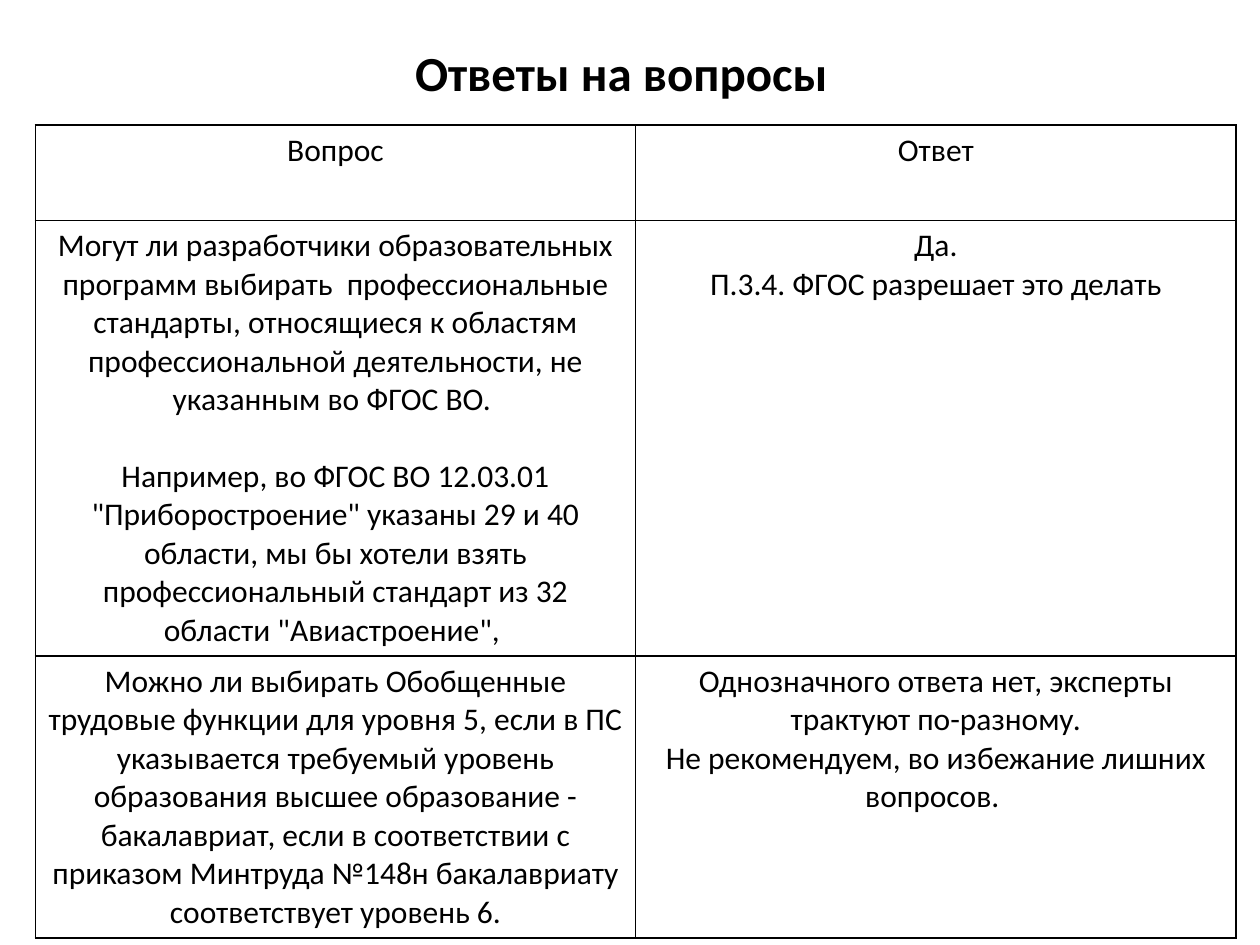
from dataclasses import dataclass

from lxml.etree import SubElement
from pptx import Presentation
from pptx.dml.color import RGBColor
from pptx.enum.text import MSO_ANCHOR, PP_ALIGN
from pptx.oxml.ns import qn
from pptx.util import Inches, Pt


@dataclass(frozen=True)
class Theme:
    font: str = "Calibri"
    ink: str = "000000"
    paper: str = "FFFFFF"
    title_size: int = 28
    body_size: int = 18
    paragraph_gap: int = 22
    border: int = 1


THEME = Theme()
TITLE = "Ответы на вопросы"

# Each cell is a list of blocks; blocks are set apart by a gap,
# and the lines within a block are paragraphs without one.
ROWS = [
    ([["Вопрос"]], [["Ответ"]]),
    (
        [
            ["Могут ли разработчики образовательных программ выбирать  профессиональные "
             "стандарты, относящиеся к областям профессиональной деятельности, не "
             "указанным во ФГОС ВО. "],
            ["Например, во ФГОС ВО 12.03.01 \"Приборостроение\" указаны 29 и 40 области, "
             "мы бы хотели взять профессиональный стандарт из 32 области \"Авиастроение\", "],
        ],
        [["Да.", "П.3.4. ФГОС разрешает это делать"]],
    ),
    (
        [["Можно ли выбирать Обобщенные трудовые функции для уровня 5, если в ПС "
          "указывается требуемый уровень образования высшее образование - бакалавриат, "
          "если в соответствии с приказом Минтруда №148н бакалавриату соответствует "
          "уровень 6."]],
        [["Однозначного ответа нет, эксперты трактуют по-разному.",
          "Не рекомендуем, во избежание лишних вопросов. "]],
    ),
]
ROW_HEIGHTS = [0.76, 3.45, 2.23]
TITLE_BOX = (0.43, 0.29, 9, 0.71)
TABLE_LEFT, TABLE_TOP, TABLE_WIDTH = 0.28, 0.99, 9.53


def add_text(p, text, size, bold=False):
    p.alignment = PP_ALIGN.CENTER
    r = p.add_run()
    r.text = text
    r.font.name = THEME.font
    r.font.size = Pt(size)
    r.font.bold = bold
    r.font.color.rgb = RGBColor.from_string(THEME.ink)


def add_borders(cell):
    """Draw all four sides; the lines must precede the fill in tcPr."""
    tc_pr = cell._tc.get_or_add_tcPr()
    for i, side in enumerate(("lnL", "lnR", "lnT", "lnB")):
        ln = SubElement(tc_pr, qn(f"a:{side}"), w=str(Pt(THEME.border)))
        SubElement(SubElement(ln, qn("a:solidFill")), qn("a:srgbClr"), val=THEME.ink)
        tc_pr.insert(i, ln)


def fill_cell(cell, blocks):
    cell.fill.solid()
    cell.fill.fore_color.rgb = RGBColor.from_string(THEME.paper)
    add_borders(cell)
    tf = cell.text_frame
    p = tf.paragraphs[0]
    for b, block in enumerate(blocks):
        for i, line in enumerate(block):
            if b or i:
                p = tf.add_paragraph()
            if b and not i:
                p.space_before = Pt(THEME.paragraph_gap)
            add_text(p, line, THEME.body_size)


def add_title(s):
    title = s.shapes.title
    title.left, title.top, title.width, title.height = map(Inches, TITLE_BOX)
    tf = title.text_frame
    tf.word_wrap = True
    tf.vertical_anchor = MSO_ANCHOR.TOP
    p = tf.paragraphs[0]
    p.space_before = Pt(THEME.title_size * 0.2)
    add_text(p, TITLE, THEME.title_size, bold=True)


def add_answers(s):
    columns = len(ROWS[0])
    table = s.shapes.add_table(
        len(ROWS), columns, Inches(TABLE_LEFT), Inches(TABLE_TOP),
        Inches(TABLE_WIDTH), Inches(sum(ROW_HEIGHTS))).table
    table.first_row = table.horz_banding = False
    for column in table.columns:
        column.width = Inches(TABLE_WIDTH / columns)
    for row, height, content in zip(table.rows, ROW_HEIGHTS, ROWS):
        row.height = Inches(height)
        for cell, blocks in zip(row.cells, content):
            fill_cell(cell, blocks)


def main():
    prs = Presentation()
    prs.slide_width, prs.slide_height = Inches(10), Inches(7.5)
    s = prs.slides.add_slide(prs.slide_layouts.get_by_name("Title Only"))
    add_title(s)
    add_answers(s)
    prs.save("out.pptx")


if __name__ == "__main__":
    main()
